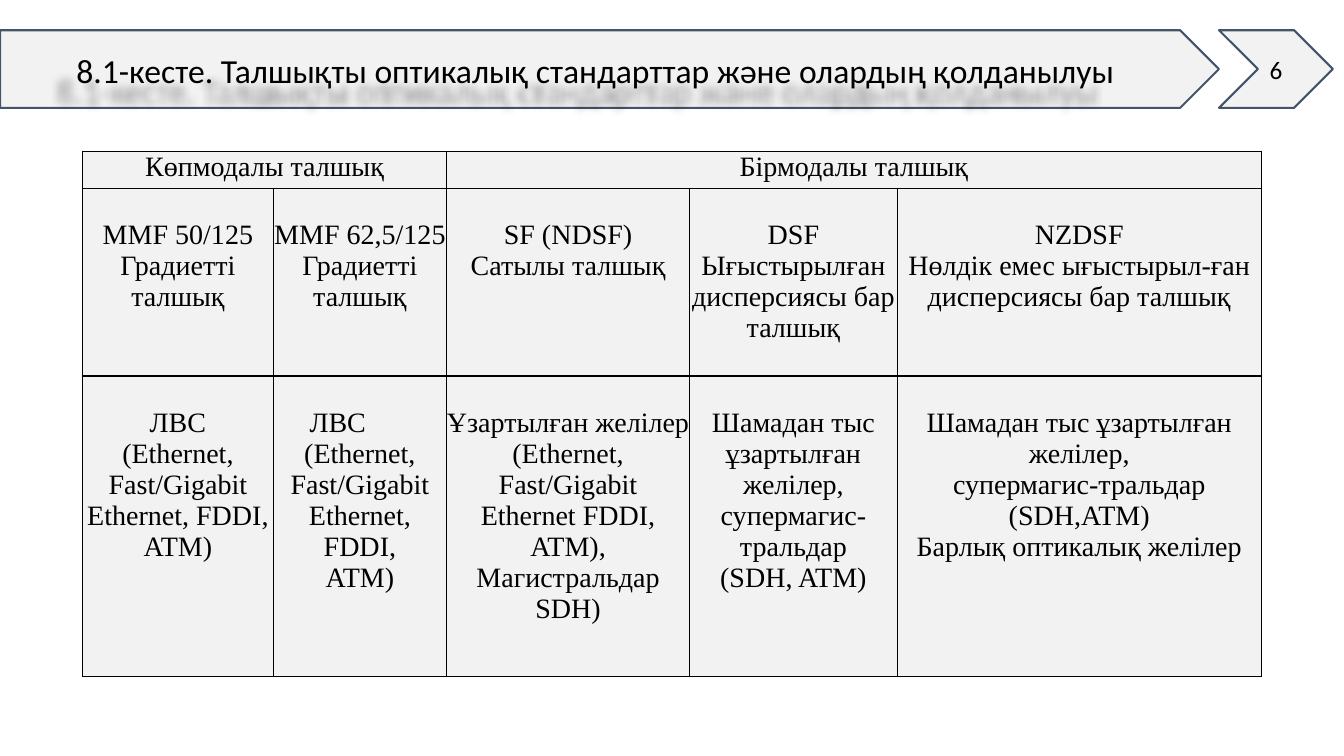
from lxml.etree import SubElement
from pptx import Presentation
from pptx.dml.color import RGBColor
from pptx.enum.shapes import MSO_SHAPE
from pptx.enum.text import MSO_ANCHOR, MSO_AUTO_SIZE, PP_ALIGN
from pptx.oxml.ns import qn
from pptx.util import Inches, Pt

BLACK = RGBColor(0x00, 0x00, 0x00)
PALE = RGBColor(0xF2, 0xF2, 0xF2)
SLATE = RGBColor(0x44, 0x54, 0x6A)

TITLE = "8.1-кесте. Талшықты оптикалық стандарттар және олардың қолданылуы"
COLS = [1.89, 1.72, 2.41, 2.06, 3.61]
ROWS = [0.37, 1.86, 2.98]
GROUPS = [("Көпмодалы талшық", 0, 1), ("Бірмодалы талшық", 2, 4)]
KINDS = [
    "MMF 50/125\nГрадиетті талшық",
    "MMF 62,5/125\nГрадиетті талшық",
    "SF (NDSF)\nСатылы талшық",
    "DSF\nЫғыстырылған дисперсиясы бар талшық",
    "NZDSF\nНөлдік емес ығыстырыл-ған дисперсиясы бар талшық",
]
USES = [
    "ЛВС\n(Ethernet,\nFast/Gigabit\nEthernet, FDDI,\nATM)",
    "ЛВС\t\n(Ethernet,\nFast/Gigabit\nEthernet,\nFDDI,\nATM)",
    "Ұзартылған желілер\n(Ethernet,\nFast/Gigabit\nEthernet FDDI,\nATM),\nМагистральдар\nSDH)",
    "Шамадан тыс ұзартылған\nжелілер,\nсупермагис-тральдар\n(SDH, ATM)",
    "Шамадан тыс ұзартылған желілер,\nсупермагис-тральдар\n(SDH,ATM)\nБарлық оптикалық желілер",
]


def write(frame, text, size, face):
    """Fill a text frame with centred black paragraphs."""
    frame.text = text
    for para in frame.paragraphs:
        para.alignment = PP_ALIGN.CENTER
        font = para.font
        font.size, font.name, font.bold = Pt(size), face, False
        font.color.rgb = BLACK


def add_arrow(slide, kind, left, top, width, height):
    """Add a pale block arrow with a slate outline."""
    shape = slide.shapes.add_shape(
        kind, Inches(left), Inches(top), Inches(width), Inches(height))
    shape.shadow.inherit = False
    shape.fill.solid()
    shape.fill.fore_color.rgb = PALE
    shape.line.color.rgb = SLATE
    shape.line.width = Pt(1.5)
    return shape


def add_shade(shape):
    """Cast a soft shadow down and to the left."""
    effects = SubElement(shape._element.spPr, qn("a:effectLst"))
    shade = SubElement(effects, qn("a:outerShdw"), blurRad=str(Inches(0.08)),
                       dist=str(Inches(0.27)), dir="8100000", rotWithShape="0")
    color = SubElement(shade, qn("a:srgbClr"), val=str(BLACK))
    SubElement(color, qn("a:alpha"), val="40000")


def add_header(slide, left, top, width, height):
    """Place the title banner and the page number arrow."""
    tip = 1.13
    body = width - tip
    add_arrow(slide, MSO_SHAPE.PENTAGON, left, top, body, height)
    title = slide.shapes.title
    title.left, title.top = Inches(left), Inches(top + 0.14)
    title.width, title.height = Inches(body - 0.28), Inches(0.5)
    write(title.text_frame, TITLE, 24, "Calibri")
    title.text_frame.auto_size = MSO_AUTO_SIZE.NONE
    title.text_frame.vertical_anchor = MSO_ANCHOR.MIDDLE
    add_shade(title)
    slide.shapes._spTree.append(title._element)
    page = add_arrow(slide, MSO_SHAPE.CHEVRON, left + body, top, tip, height)
    write(page.text_frame, "6", 18, "Calibri")
    page.text_frame.vertical_anchor = MSO_ANCHOR.MIDDLE


def style_cell(cell):
    """Give a cell thin black borders, a pale fill and no margins."""
    props = cell._tc.get_or_add_tcPr()
    for side in ("lnL", "lnR", "lnT", "lnB"):
        line = SubElement(props, qn(f"a:{side}"), w=str(Pt(1)))
        fill = SubElement(line, qn("a:solidFill"))
        SubElement(fill, qn("a:srgbClr"), val=str(BLACK))
    cell.fill.solid()
    cell.fill.fore_color.rgb = PALE
    cell.margin_left = cell.margin_right = 0
    cell.margin_top = cell.margin_bottom = 0


def add_grid(slide, left, top, width, height):
    """Place the table of fibre types and their uses."""
    table = slide.shapes.add_table(
        len(ROWS), len(COLS), Inches(left), Inches(top),
        Inches(width), Inches(height)).table
    table.first_row = table.horz_banding = False
    for col, size in zip(table.columns, COLS):
        col.width = Inches(size)
    for row, size in zip(table.rows, ROWS):
        row.height = Inches(size)
    for cell in table.iter_cells():
        style_cell(cell)
    for text, first, last in GROUPS:
        table.cell(0, first).merge(table.cell(0, last))
        write(table.cell(0, first).text_frame, text, 20, "Times New Roman")
    for row, texts in enumerate((KINDS, USES), 1):
        for col, text in enumerate(texts):
            cell = table.cell(row, col)
            cell.margin_top = Inches(0.31)
            write(cell.text_frame, text, 20, "Times New Roman")


def main():
    """Build and save the slide."""
    deck = Presentation()
    deck.slide_width, deck.slide_height = Inches(13.33), Inches(7.5)
    slide = deck.slides.add_slide(deck.slide_layouts[5])
    add_header(slide, 0, 0.3, 13.22, 0.77)
    add_grid(slide, 0.82, 1.5, sum(COLS), sum(ROWS))
    deck.save("out.pptx")


if __name__ == "__main__":
    main()
